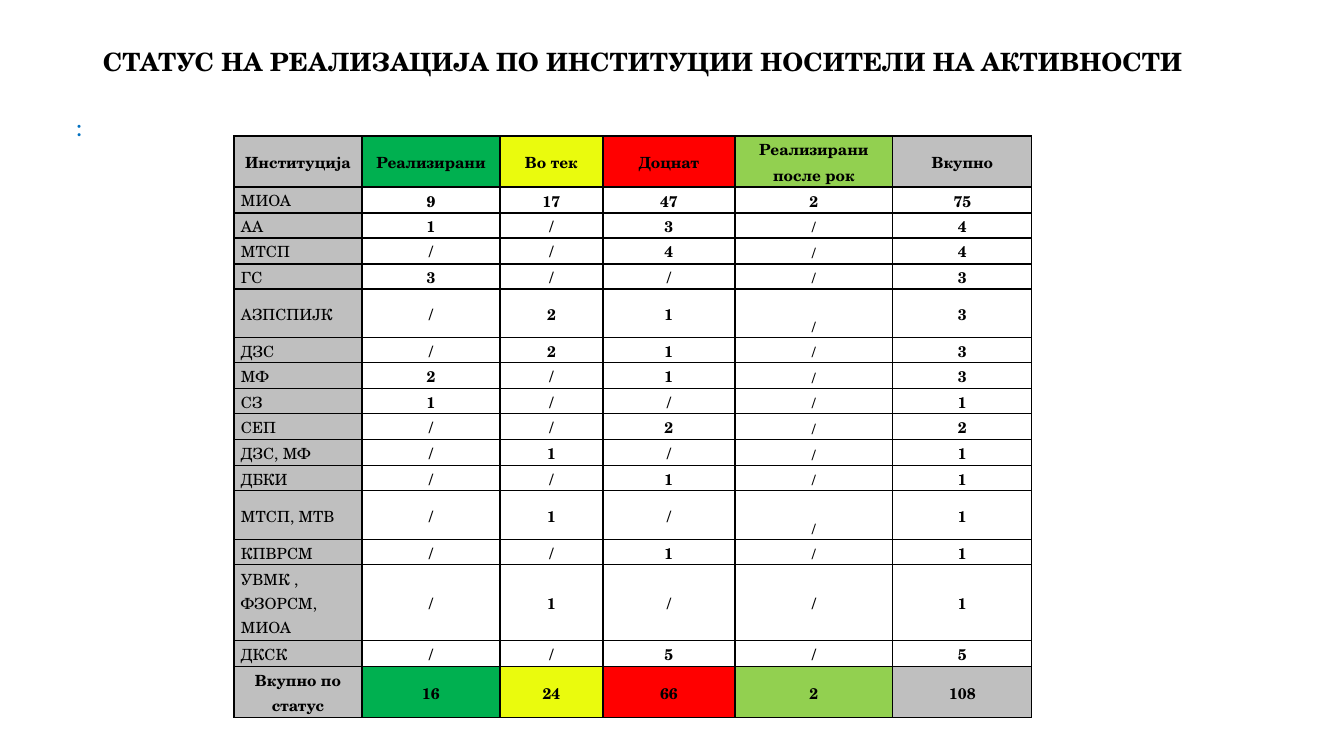
from itertools import pairwise

from lxml import etree
from pptx import Presentation
from pptx import util as u
from pptx.dml.color import RGBColor
from pptx.enum import text
from pptx.oxml import ns

PX = 914400 / 100.8
SERIF = "TeX Gyre Schola"
GREY = "BFBFBF"
STATUS_FILLS = [GREY, "00B050", "EAFB0D", "FF0000", "92D050", GREY]
MIDDLE, BOTTOM = text.MSO_ANCHOR.MIDDLE, text.MSO_ANCHOR.BOTTOM
LEFT, CENTER = text.PP_ALIGN.LEFT, text.PP_ALIGN.CENTER

# Grid lines of the table
COL_EDGES = [234, 362, 500, 603, 735, 893, 1032]
ROW_EDGES = [136, 187, 213, 238, 264, 289, 338, 363, 389, 414,
             440, 466, 491, 540, 565, 641, 667, 718]
LATE_COL = 4
LOW_SLASH_ROWS = range(2, 14)

ROWS = [
    ["Институција", "Реализирани", "Во тек", "Доцнат",
     "Реализирани после рок", "Вкупно"],
    ["МИОА", "9", "17", "47", "2", "75"],
    ["АА", "1", "/", "3", "/", "4"],
    ["МТСП", "/", "/", "4", "/", "4"],
    ["ГС", "3", "/", "/", "/", "3"],
    ["АЗПСПИЈК", "/", "2", "1", "/", "3"],
    ["ДЗС", "/", "2", "1", "/", "3"],
    ["МФ", "2", "/", "1", "/", "3"],
    ["СЗ", "1", "/", "/", "/", "1"],
    ["СЕП", "/", "/", "2", "/", "2"],
    ["ДЗС, МФ", "/", "1", "/", "/", "1"],
    ["ДБКИ", "/", "/", "1", "/", "1"],
    ["МТСП, МТВ", "/", "1", "/", "/", "1"],
    ["КПВРСМ", "/", "/", "1", "/", "1"],
    ["УВМК , ФЗОРСМ, МИОА", "/", "1", "/", "/", "1"],
    ["ДКСК", "/", "/", "5", "/", "5"],
    ["Вкупно по статус", "16", "24", "66", "2", "108"],
]


def px(n):
    return u.Emu(round(n * PX))


def color(value):
    return RGBColor.from_string(value)


def write(tf, words, *, font=SERIF, size=11, fill="000000", bold=False,
          align=LEFT, spacing=1.07, before=0, after=0):
    tf.word_wrap = True
    p = tf.paragraphs[0]
    p.alignment = align
    p.line_spacing = spacing
    p.space_before, p.space_after = u.Pt(before), u.Pt(after)
    r = p.add_run()
    r.text = words
    r.font.name, r.font.size, r.font.bold = font, u.Pt(size), bold
    r.font.color.rgb = color(fill)


def add_text(s, box, words, *, top=5, **fmt):
    tf = s.shapes.add_textbox(*map(px, box)).text_frame
    tf.margin_top = px(top)
    write(tf, words, **fmt)


def add_borders(cell):
    tc_pr = cell._tc.get_or_add_tcPr()
    for i, side in enumerate(("lnL", "lnR", "lnT", "lnB")):
        ln = etree.Element(ns.qn(f"a:{side}"), w=str(u.Pt(1)))
        fill = etree.SubElement(ln, ns.qn("a:solidFill"))
        etree.SubElement(fill, ns.qn("a:srgbClr"), val="000000")
        tc_pr.insert(i, ln)


def fill_cell(cell, words, row, col):
    edge_row = row in (0, len(ROWS) - 1)
    name = col == 0 and not edge_row
    low = col == LATE_COL and row in LOW_SLASH_ROWS
    cell.margin_left = cell.margin_right = px(7)
    cell.margin_top = cell.margin_bottom = 0
    cell.vertical_anchor = BOTTOM if low else MIDDLE
    if edge_row or name:
        cell.fill.solid()
        cell.fill.fore_color.rgb = color(STATUS_FILLS[col])
    else:
        cell.fill.background()
    add_borders(cell)
    write(cell.text_frame, words, size=10 if low else 11, bold=not name,
          align=LEFT if name else CENTER, after=8)


def add_status_table(s):
    x, y = COL_EDGES[0], ROW_EDGES[0]
    box = x, y, COL_EDGES[-1] - x, ROW_EDGES[-1] - y
    table = s.shapes.add_table(len(ROWS), len(ROWS[0]), *map(px, box)).table
    table.first_row = table.horz_banding = False
    for column, (a, b) in zip(table.columns, pairwise(COL_EDGES)):
        column.width = px(b - a)
    for row, (a, b) in zip(table.rows, pairwise(ROW_EDGES)):
        row.height = px(b - a)
    for i, values in enumerate(ROWS):
        for j, words in enumerate(values):
            fill_cell(table.cell(i, j), words, i, j)


def main():
    prs = Presentation()
    prs.slide_width, prs.slide_height = px(1344), px(756)
    s = prs.slides.add_slide(prs.slide_layouts[6])

    # Heading and lead-in
    add_text(s, (93, 40, 1159, 110),
             "СТАТУС НА РЕАЛИЗАЦИЈА ПО ИНСТИТУЦИИ НОСИТЕЛИ НА АКТИВНОСТИ",
             top=10, size=18, bold=True, spacing=0.9)
    add_text(s, (66, 110, 1215, 571), ":", font="Calibri", size=18,
             fill="0070C0", spacing=0.9, before=10)

    # Status by institution
    add_status_table(s)
    prs.save("out.pptx")


if __name__ == "__main__":
    main()
